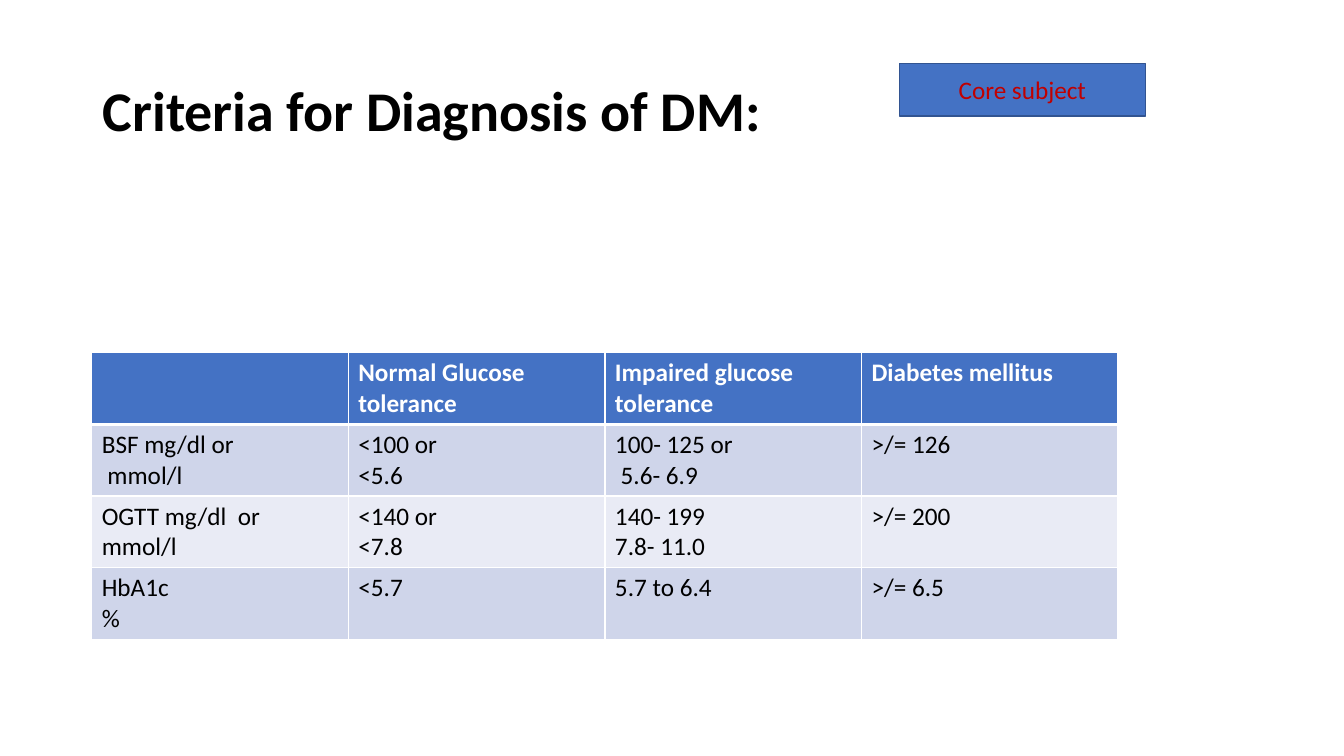
from dataclasses import dataclass

from lxml import etree
from pptx import Presentation
from pptx.dml.color import RGBColor
from pptx.enum.shapes import MSO_SHAPE
from pptx.enum.text import MSO_ANCHOR, PP_ALIGN
from pptx.oxml.ns import qn
from pptx.slide import Slide
from pptx.table import _Cell
from pptx.text.text import TextFrame
from pptx.util import Inches, Pt

RECTANGLE = MSO_SHAPE.RECTANGLE
MIDDLE, TOP = MSO_ANCHOR.MIDDLE, MSO_ANCHOR.TOP
LEFT, CENTER = PP_ALIGN.LEFT, PP_ALIGN.CENTER

BLACK = RGBColor(0x00, 0x00, 0x00)
WHITE = RGBColor(0xFF, 0xFF, 0xFF)
BLUE = RGBColor(0x44, 0x72, 0xC4)
DARK_BLUE = RGBColor(0x32, 0x54, 0x91)
BAND_DARK = RGBColor(0xCF, 0xD5, 0xEA)
BAND_LIGHT = RGBColor(0xE9, 0xEB, 0xF5)
RED = RGBColor(0xC0, 0x00, 0x00)

COLUMN_WIDTH, ROW_HEIGHT = 2.545, 0.64
THIN, THICK = 1, 3


@dataclass(frozen=True)
class TextStyle:
    size: float
    color: RGBColor
    bold: bool = False
    align: PP_ALIGN = LEFT
    anchor: MSO_ANCHOR = TOP


@dataclass(frozen=True)
class CriteriaRow:
    texts: tuple[str, ...]
    fill: RGBColor
    style: TextStyle
    top_edge: float = THIN
    bottom_edge: float = THIN


TITLE_STYLE = TextStyle(40, BLACK, bold=True, anchor=MIDDLE)
TAG_STYLE = TextStyle(18, RED, align=CENTER, anchor=MIDDLE)
HEADER_STYLE = TextStyle(18, WHITE, bold=True)
BODY_STYLE = TextStyle(18, BLACK)

CRITERIA = (
    CriteriaRow(("", "Normal Glucose tolerance", "Impaired glucose tolerance",
                 "Diabetes mellitus"), BLUE, HEADER_STYLE, bottom_edge=THICK),
    CriteriaRow(("BSF mg/dl or\n mmol/l", "<100 or \n<5.6",
                 "100- 125 or\n 5.6- 6.9", ">/= 126"),
                BAND_DARK, BODY_STYLE, top_edge=THICK),
    CriteriaRow(("OGTT mg/dl  or mmol/l", "<140 or\n<7.8",
                 "140- 199\n7.8- 11.0", ">/= 200"), BAND_LIGHT, BODY_STYLE),
    CriteriaRow(("HbA1c\n%", "<5.7", "5.7 to 6.4", ">/= 6.5"),
                BAND_DARK, BODY_STYLE),
)


def write_text(frame: TextFrame, text: str, style: TextStyle) -> None:
    paragraph = frame.paragraphs[0]
    paragraph.text = text
    paragraph.alignment = style.align
    font_format = {"name": "Calibri", "size": Pt(style.size), "bold": style.bold}
    for run in paragraph.runs:
        for attribute, value in font_format.items():
            setattr(run.font, attribute, value)
        run.font.color.rgb = style.color


def add_borders(cell: _Cell, row: CriteriaRow) -> None:
    """Give the cell white edges; call before filling it."""
    properties = cell._tc.get_or_add_tcPr()
    widths = {"a:lnL": THIN, "a:lnR": THIN,
              "a:lnT": row.top_edge, "a:lnB": row.bottom_edge}
    for tag, width in widths.items():
        edge = etree.SubElement(properties, qn(tag), w=str(Pt(width)))
        fill = etree.SubElement(edge, qn("a:solidFill"))
        etree.SubElement(fill, qn("a:srgbClr"), val=str(WHITE))


def add_title(slide: Slide) -> None:
    title = slide.shapes.title
    place = {"left": 0.92, "top": 0.4, "width": 11.5, "height": 1.45}
    for attribute, inches in place.items():
        setattr(title, attribute, Inches(inches))
    frame = title.text_frame
    frame.word_wrap = True
    frame.vertical_anchor = TITLE_STYLE.anchor
    write_text(frame, "Criteria for Diagnosis of DM:", TITLE_STYLE)
    frame.paragraphs[0].line_spacing = 0.9


def add_criteria_table(slide: Slide) -> None:
    row_count, column_count = len(CRITERIA), len(CRITERIA[0].texts)
    table = slide.shapes.add_table(
        row_count, column_count, Inches(0.91), Inches(3.5),
        Inches(COLUMN_WIDTH * column_count), Inches(ROW_HEIGHT * row_count)).table
    for row_index, row in enumerate(CRITERIA):
        for column_index, text in enumerate(row.texts):
            cell = table.cell(row_index, column_index)
            add_borders(cell, row)
            cell.fill.solid()
            cell.fill.fore_color.rgb = row.fill
            cell.vertical_anchor = row.style.anchor
            write_text(cell.text_frame, text, row.style)


def add_subject_tag(slide: Slide) -> None:
    tag = slide.shapes.add_shape(
        RECTANGLE, Inches(8.92), Inches(0.63), Inches(2.44), Inches(0.52))
    tag.shadow.inherit = False
    tag.fill.solid()
    tag.fill.fore_color.rgb = BLUE
    tag.line.color.rgb = DARK_BLUE
    tag.line.width = Pt(1)
    tag.text_frame.vertical_anchor = TAG_STYLE.anchor
    write_text(tag.text_frame, "Core subject", TAG_STYLE)


def main() -> None:
    presentation = Presentation()
    presentation.slide_width = Inches(13.33)
    presentation.slide_height = Inches(7.5)
    title_only = presentation.slide_layouts[5]
    slide = presentation.slides.add_slide(title_only)
    add_title(slide)
    add_criteria_table(slide)
    add_subject_tag(slide)
    presentation.save("out.pptx")


if __name__ == "__main__":
    main()
